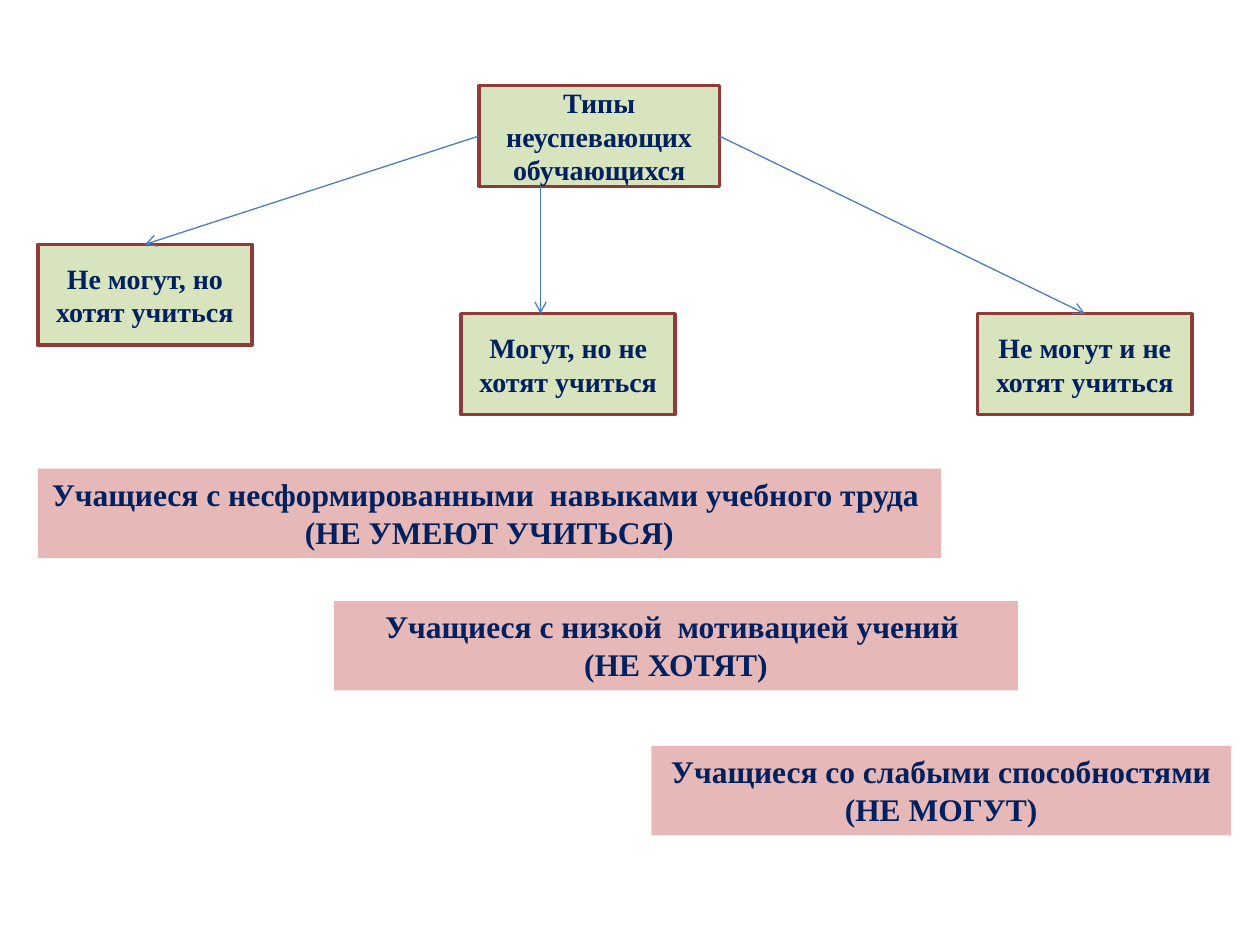
from dataclasses import dataclass

from lxml import etree
from pptx import Presentation
from pptx.dml.color import RGBColor
from pptx.enum.shapes import MSO_CONNECTOR, MSO_SHAPE
from pptx.enum.text import MSO_ANCHOR, MSO_AUTO_SIZE, PP_ALIGN
from pptx.oxml.ns import qn
from pptx.shapes.base import BaseShape
from pptx.slide import Slide
from pptx.text.text import TextFrame
from pptx.util import Inches, Pt

RECT = MSO_SHAPE.RECTANGLE
STRAIGHT = MSO_CONNECTOR.STRAIGHT
CENTER = PP_ALIGN.CENTER
TOP, MIDDLE = MSO_ANCHOR.TOP, MSO_ANCHOR.MIDDLE
FIT = MSO_AUTO_SIZE.SHAPE_TO_FIT_TEXT


@dataclass(frozen=True)
class Theme:
    font: str = "Times New Roman"
    ink: str = "002060"
    green: str = "D7E4BD"
    border: str = "8E3B39"
    pink: str = "E6B9B8"
    arrow: str = "4B7EBC"
    node_size: float = 16
    band_size: float = 18
    node_line: float = 2
    arrow_line: float = 0.75


@dataclass(frozen=True)
class Box:
    left: float
    top: float
    width: float
    lines: tuple[str, ...]

    @property
    def right(self) -> float:
        return self.left + self.width

    @property
    def center(self) -> float:
        return self.left + self.width / 2


@dataclass(frozen=True)
class Arrow:
    start: tuple[float, float]
    end: tuple[float, float]


THEME = Theme()
NODE_HEIGHT, BAND_HEIGHT = 0.8, 0.71
TYPE_WIDTH, TYPE_TOP = 1.7, 2.49
DROP_X = 4.29

ROOT = Box(3.8, 0.68, 1.91, ("Типы неуспевающих обучающихся",))
EAGER = Box(0.3, 1.94, TYPE_WIDTH, ("Не могут, но хотят учиться",))
ABLE = Box(3.66, TYPE_TOP, TYPE_WIDTH, ("Могут, но не хотят учиться",))
NEITHER = Box(7.76, TYPE_TOP, TYPE_WIDTH, ("Не могут и не хотят учиться",))
NODES = (ROOT, EAGER, ABLE, NEITHER)
BANDS = (
    Box(2.65, 4.77, 5.43, ("Учащиеся с низкой  мотивацией учений ", "(НЕ ХОТЯТ)")),
    Box(5.17, 5.92, 4.6, ("Учащиеся со слабыми способностями", "(НЕ МОГУТ)")),
    Box(0.3, 3.72, 7.17,
        ("Учащиеся с несформированными  навыками учебного труда ", "(НЕ УМЕЮТ УЧИТЬСЯ)")),
)
ROOT_MIDDLE = ROOT.top + NODE_HEIGHT / 2
ARROWS = (
    Arrow((ROOT.left, ROOT_MIDDLE), (EAGER.center, EAGER.top)),
    Arrow((DROP_X, ROOT.top + NODE_HEIGHT), (DROP_X, ABLE.top)),
    Arrow((ROOT.right, ROOT_MIDDLE), (NEITHER.center, NEITHER.top)),
)


def color(code: str) -> RGBColor:
    return RGBColor.from_string(code)


def write(frame: TextFrame, lines: tuple[str, ...], *, size: float,
          anchor: MSO_ANCHOR) -> None:
    frame.word_wrap = True
    frame.vertical_anchor = anchor
    for i, line in enumerate(lines):
        para = frame.paragraphs[0] if i == 0 else frame.add_paragraph()
        para.alignment = CENTER
        run = para.add_run()
        run.text = line
        run.font.name = THEME.font
        run.font.size = Pt(size)
        run.font.bold = True
        run.font.color.rgb = color(THEME.ink)


def add_rect(slide: Slide, box: Box, height: float, fill: str) -> BaseShape:
    shape = slide.shapes.add_shape(RECT, Inches(box.left), Inches(box.top),
                                   Inches(box.width), Inches(height))
    shape.shadow.inherit = False
    shape.fill.solid()
    shape.fill.fore_color.rgb = color(fill)
    return shape


def add_band(slide: Slide, box: Box) -> None:
    shape = add_rect(slide, box, BAND_HEIGHT, THEME.pink)
    shape.line.fill.background()
    write(shape.text_frame, box.lines, size=THEME.band_size, anchor=TOP)
    shape.text_frame.auto_size = FIT


def add_node(slide: Slide, box: Box) -> None:
    shape = add_rect(slide, box, NODE_HEIGHT, THEME.green)
    shape.line.color.rgb = color(THEME.border)
    shape.line.width = Pt(THEME.node_line)
    write(shape.text_frame, box.lines, size=THEME.node_size, anchor=MIDDLE)


def add_arrow(slide: Slide, arrow: Arrow) -> None:
    ends = (Inches(n) for n in (*arrow.start, *arrow.end))
    link = slide.shapes.add_connector(STRAIGHT, *ends)
    link.line.color.rgb = color(THEME.arrow)
    link.line.width = Pt(THEME.arrow_line)
    props = link.line._get_or_add_ln()
    etree.SubElement(props, qn("a:tailEnd"), type="arrow")
    etree.SubElement(props.getparent(), qn("a:effectLst"))


def main() -> None:
    deck = Presentation()
    deck.slide_width, deck.slide_height = Inches(10), Inches(7.5)
    slide = deck.slides.add_slide(deck.slide_layouts[6])
    for band in BANDS:
        add_band(slide, band)
    for node in NODES:
        add_node(slide, node)
    for arrow in ARROWS:
        add_arrow(slide, arrow)
    deck.save("out.pptx")


if __name__ == "__main__":
    main()
